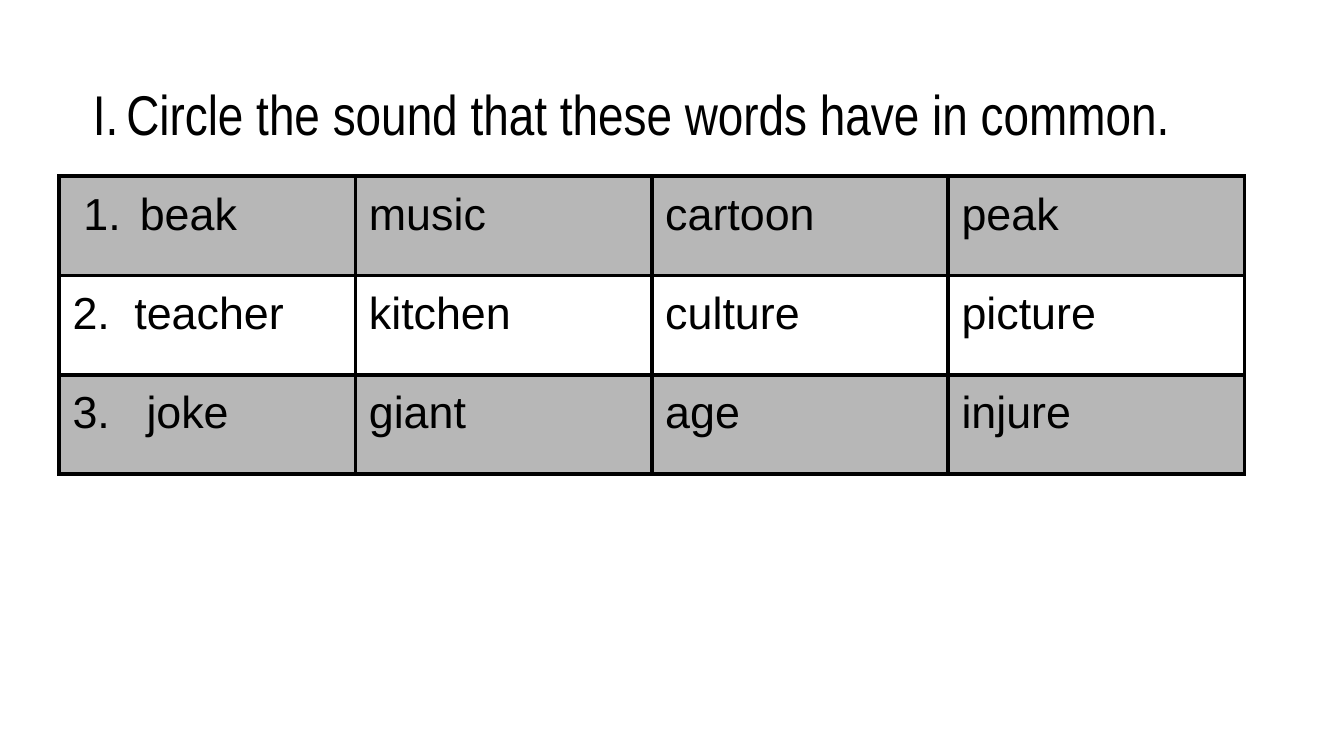
import pptx
import pptx.util
import pptx.dml.color
import pptx.enum.text
import pptx.oxml.ns
import lxml.etree

Inches = pptx.util.Inches
Pt = pptx.util.Pt

TITLE = "Circle the sound that these words have in common."
ROWS = [
    ["beak", "music", "cartoon", "peak"],
    ["2.\tteacher", "kitchen", "culture", "picture"],
    ["3.\tjoke", "giant", "age", "injure"],
]
HANGS = [(0.5, 0.42), (0.46, 0.46), (0.55, 0.55)]
BANDS = ["B7B7B7", None, "B7B7B7"]
INK = "000000"
LEFT, TOP, WIDE, HIGH = 0.44, 1.31, 8.82, 0.74
PAD = Inches(0.1)


def color(code):
    return pptx.dml.color.RGBColor.from_string(code)


def add(node, tag, **attrs):
    return lxml.etree.SubElement(node, pptx.oxml.ns.qn(tag), **attrs)


def style(para, face, size):
    para.font.name = face
    para.font.size = Pt(size)
    para.font.color.rgb = color(INK)


def indent(para, left, hang):
    props = para._p.get_or_add_pPr()
    props.set("marL", str(Inches(left)))
    props.set("indent", str(-Inches(hang)))
    return props


def number(props, kind, face):
    ink = add(props, "a:buClr")
    add(ink, "a:srgbClr", val=INK)
    add(props, "a:buFont", typeface=face)
    add(props, "a:buAutoNum", type=kind)


def border(cell):
    props = cell._tc.get_or_add_tcPr()
    for side in ("a:lnL", "a:lnR", "a:lnT", "a:lnB"):
        line = add(props, side, w=str(Pt(2.25)))
        fill = add(line, "a:solidFill")
        add(fill, "a:srgbClr", val=INK)


def pad(box):
    box.margin_left = box.margin_right = PAD
    box.margin_top = box.margin_bottom = PAD


def head(slide):
    title = slide.shapes.title
    title.left, title.top = Inches(0.34), Inches(0.49)
    title.width, title.height = Inches(9.32), Inches(0.63)
    frame = title.text_frame
    frame.text = TITLE
    frame.word_wrap = True
    frame.auto_size = pptx.enum.text.MSO_AUTO_SIZE.NONE
    frame.vertical_anchor = pptx.enum.text.MSO_ANCHOR.TOP
    pad(frame)
    para = frame.paragraphs[0]
    para.alignment = pptx.enum.text.PP_ALIGN.LEFT
    number(indent(para, 0.5, 0.25), "romanUcPeriod", "Arial Narrow")
    style(para, "Arial Narrow", 30)


def grid(slide):
    rows, cols = len(ROWS), len(ROWS[0])
    table = slide.shapes.add_table(
        rows, cols, Inches(LEFT), Inches(TOP),
        Inches(WIDE), Inches(HIGH * rows)).table
    table.first_row = table.horz_banding = False
    for r, (words, hang, band) in enumerate(zip(ROWS, HANGS, BANDS)):
        for c, word in enumerate(words):
            cell = table.cell(r, c)
            cell.text = word
            pad(cell)
            border(cell)
            if band:
                cell.fill.solid()
                cell.fill.fore_color.rgb = color(band)
            else:
                cell.fill.background()
            para = cell.text_frame.paragraphs[0]
            if c == 0:
                props = indent(para, *hang)
                if r == 0:
                    number(props, "arabicPeriod", "Arial")
            style(para, "Arial", 24)


def main():
    deck = pptx.Presentation()
    deck.slide_width, deck.slide_height = Inches(10), Inches(10 * 9 / 16)
    slide = deck.slides.add_slide(deck.slide_layouts[5])
    head(slide)
    grid(slide)
    deck.save("out.pptx")


if __name__ == "__main__":
    main()
